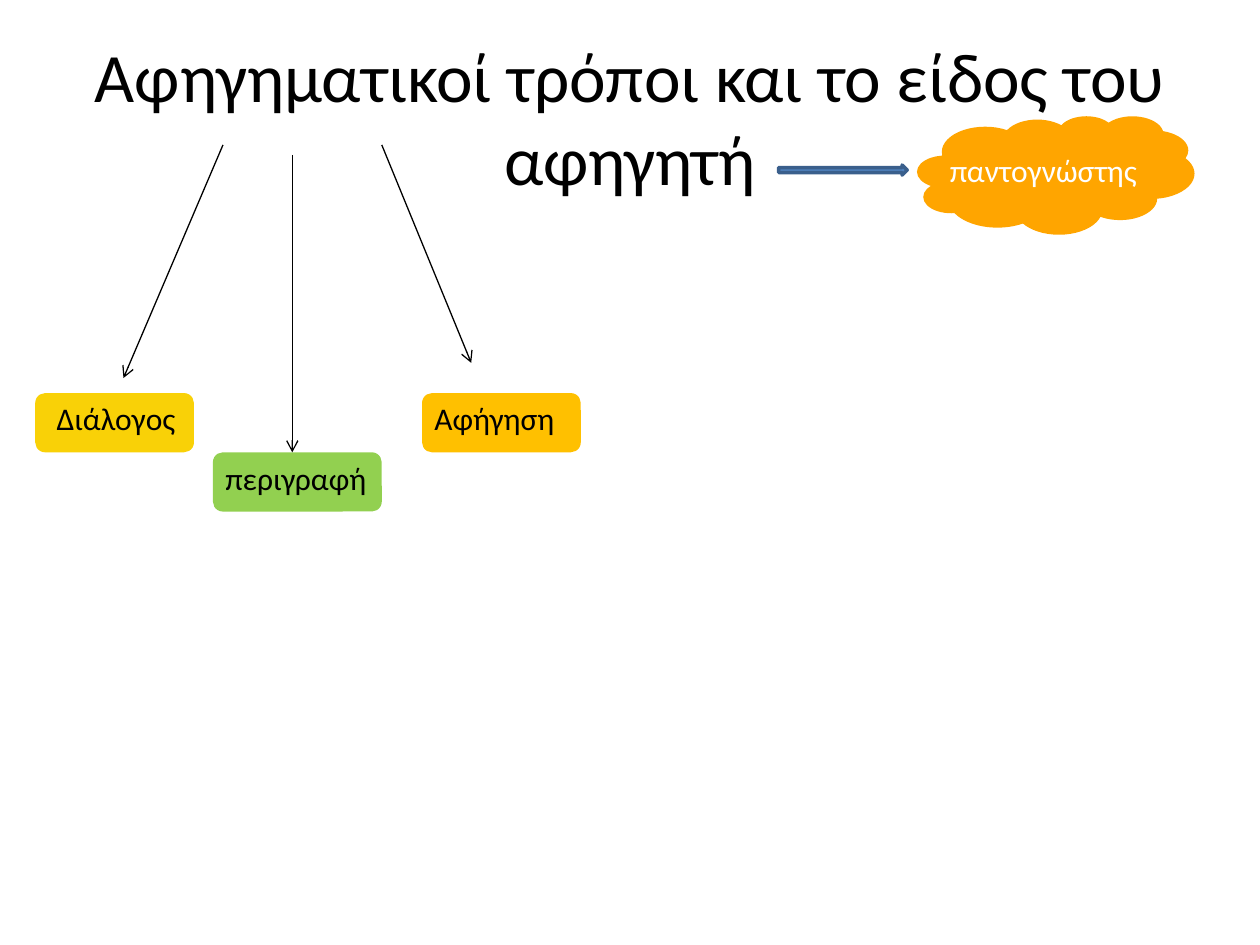
from lxml.etree import SubElement
from pptx import Presentation
from pptx.dml.color import RGBColor
from pptx.enum.shapes import MSO_CONNECTOR, MSO_SHAPE as Shape
from pptx.enum.text import MSO_ANCHOR as Anchor, PP_ALIGN as Align
from pptx.oxml.ns import qn
from pptx.util import Inches, Pt

COLORS = {
    "black": "000000", "white": "FFFFFF", "orange": "FFA500", "amber": "FFC000",
    "green": "92D050", "yellow": "F9D107", "blue": "4F81BD", "navy": "3A5F8C",
}
CELL = Inches(0.1)  # the page is a grid of 100 columns by 75 rows


def color(name):
    return RGBColor.from_string(COLORS[name])


def add_text(text, area, size=18, ink="black", align=Align.LEFT, anchor=Anchor.TOP):
    box = page.shapes.add_textbox(*(int(n * CELL) for n in area))
    frame = box.text_frame
    frame.word_wrap = True
    frame.vertical_anchor = anchor
    para = frame.paragraphs[0]
    para.alignment = align
    span = para.add_run()
    span.text = text
    span.font.name = "Calibri"
    span.font.size = Pt(size)
    span.font.color.rgb = color(ink)


deck = Presentation()
deck.slide_width, deck.slide_height = 100 * CELL, 75 * CELL
page = deck.slides.add_slide(deck.slide_layouts[6])

# Filled shapes: preset, (column, row, columns, rows), fill, outline
shapes = [
    (Shape.CLOUD, (72.8, 9.2, 22, 9.4), "orange", None),
    (Shape.ROUNDED_RECTANGLE, (33.5, 31.2, 12.6, 4.7), "amber", None),
    (Shape.ROUNDED_RECTANGLE, (16.9, 35.9, 13.4, 4.7), "green", None),
    (Shape.ROUNDED_RECTANGLE, (2.8, 31.2, 12.6, 4.7), "yellow", None),
    (Shape.RIGHT_ARROW, (61.8, 13.1, 10.2, 0.8), "blue", "navy"),
]
for preset, area, fill, outline in shapes:
    shape = page.shapes.add_shape(preset, *(int(n * CELL) for n in area))
    shape.shadow.inherit = False
    shape.fill.solid()
    shape.fill.fore_color.rgb = color(fill)
    if outline:
        shape.line.color.rgb = color(outline)
        shape.line.width = Pt(2)
    else:
        shape.line.fill.background()

add_text("Αφηγηματικοί τρόποι και το είδος του αφηγητή", (5, 3, 90, 12.5),
         size=39.6, align=Align.CENTER, anchor=Anchor.MIDDLE)

# Arrows from the title down to the three modes: start and end column, row
arrows = [
    (17.7, 11.5, 9.8, 30),
    (23.2, 12.3, 23.2, 35.9),
    (30.3, 11.5, 37.4, 28.8),
]
for ends in arrows:
    arrow = page.shapes.add_connector(MSO_CONNECTOR.STRAIGHT, *(int(n * CELL) for n in ends))
    arrow.line.color.rgb = color("black")
    arrow.line.width = Pt(0.75)
    SubElement(arrow.line._get_or_add_ln(), qn("a:tailEnd"), type="arrow")
    SubElement(arrow._element.spPr, qn("a:effectLst"))

add_text("Διάλογος", (3.5, 31.2, 11.8, 4))
add_text("περιγραφή", (16.9, 35.9, 14.2, 4))
add_text("Αφήγηση", (33.5, 31.2, 12.6, 4))
add_text("παντογνώστης", (74.4, 11.5, 20.5, 4), ink="white")

deck.save("out.pptx")
